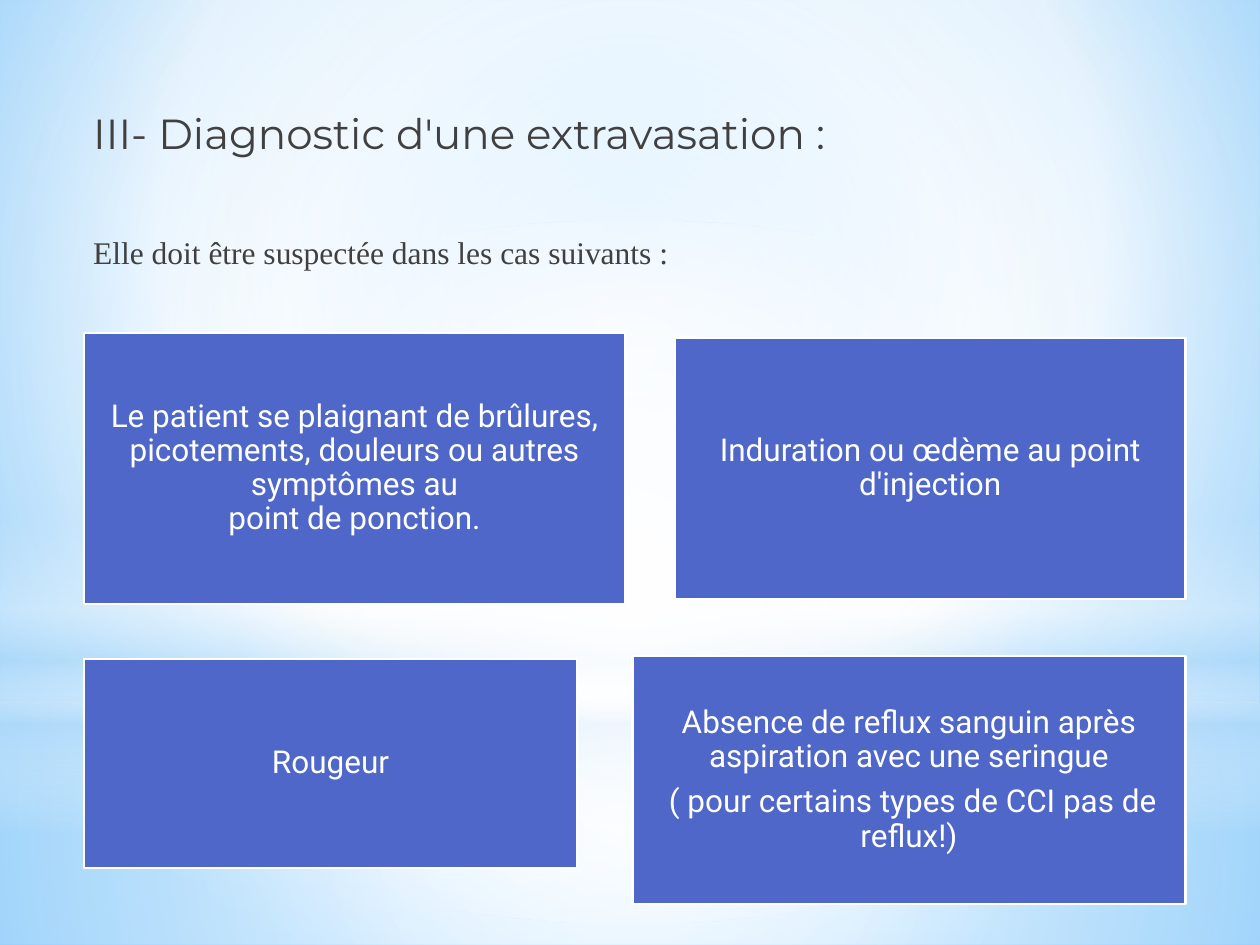
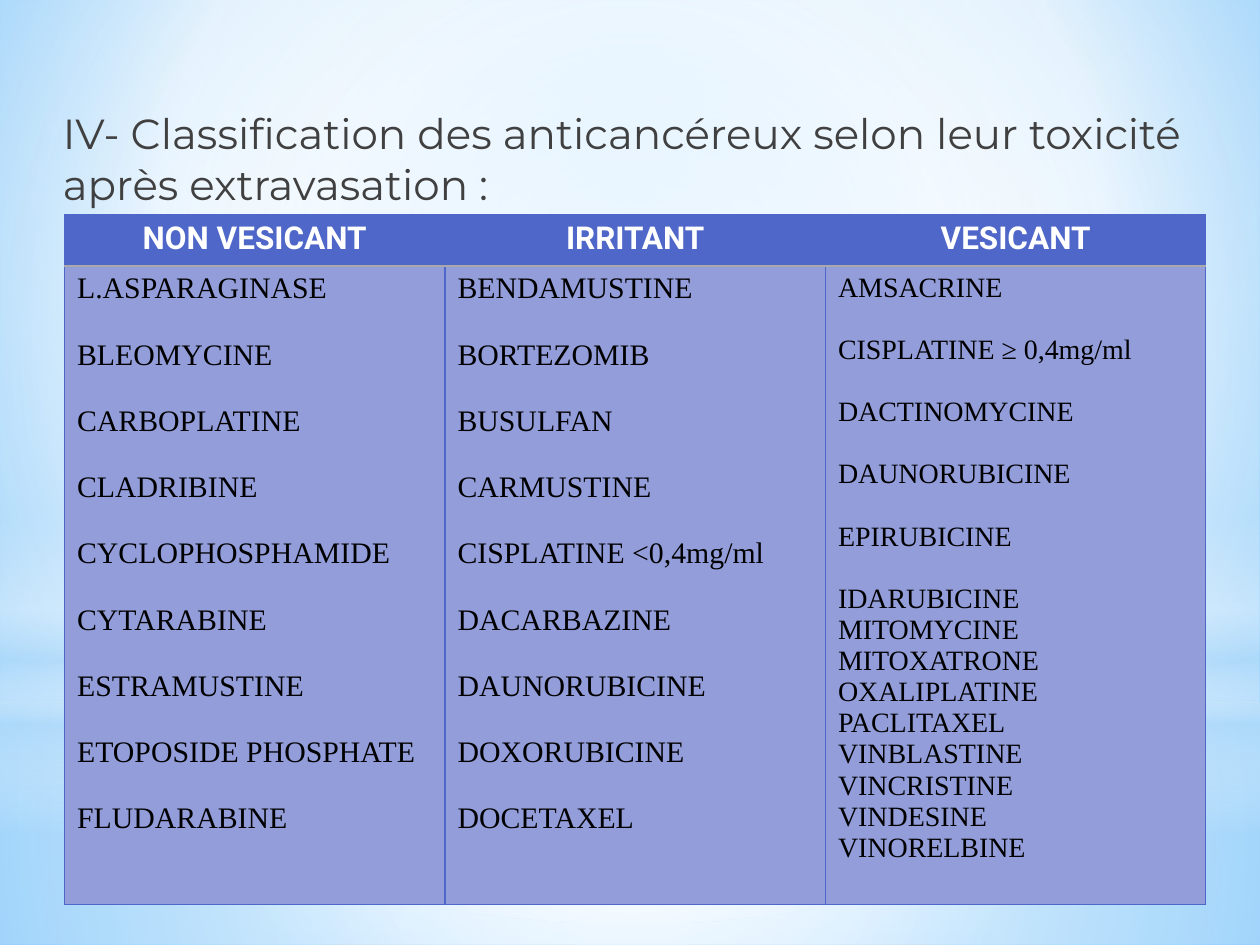
"""Build two slides on the diagnosis and classification of extravasation."""
from dataclasses import dataclass

from lxml import etree
from pptx import Presentation
from pptx.dml.color import RGBColor
from pptx.enum.shapes import MSO_SHAPE
from pptx.enum.text import MSO_ANCHOR, PP_ALIGN
from pptx.oxml.ns import qn
from pptx.util import Cm, Pt

RECTANGLE, OVAL = MSO_SHAPE.RECTANGLE, MSO_SHAPE.OVAL
MIDDLE = MSO_ANCHOR.MIDDLE
LEFT, CENTER = PP_ALIGN.LEFT, PP_ALIGN.CENTER

BLUE, PALE_BLUE, SKY = "4E67C8", "929DDA", "B4DCFA"
WHITE, BLACK, DARK_GREY, GREY = "FFFFFF", "000000", "404040", "A9A9A9"
TITLE_FONT, BODY_FONT, SERIF_FONT = "Montserrat", "Roboto", "Times New Roman"
SLIDE_WIDTH, SLIDE_HEIGHT = 25.4, 19.05
SERIF_LINE = 1.11


@dataclass(frozen=True)
class TextStyle:
    """Look of one run of text."""
    font: str
    size: float
    color: str
    bold: bool = False


@dataclass(frozen=True)
class Box:
    """Position and size in centimetres."""
    left: float
    top: float
    width: float
    height: float

    def lengths(self) -> tuple:
        """Return the four values as lengths."""
        return Cm(self.left), Cm(self.top), Cm(self.width), Cm(self.height)


@dataclass(frozen=True)
class Gradient:
    """Stops (position, colour, opacity), with an angle or a circular focus."""
    stops: tuple
    focus: tuple = (50, 50, 50, 50)
    angle: int | None = None


@dataclass(frozen=True)
class Band:
    """Translucent shape of the backdrop."""
    kind: int
    box: Box
    gradient: Gradient


@dataclass(frozen=True)
class Card:
    """Blue box with centred paragraphs."""
    box: Box
    paragraphs: tuple


@dataclass(frozen=True)
class DrugColumn:
    """Table column: spaced names, then names without a gap."""
    heading: str
    size: int
    spaced: tuple
    tight: tuple = ()


TITLE_STYLE = TextStyle(TITLE_FONT, 24, DARK_GREY)
LEAD_STYLE = TextStyle(SERIF_FONT, 18, DARK_GREY)
CARD_STYLE = TextStyle(BODY_FONT, 18, WHITE)
HEADING_STYLE = TextStyle(BODY_FONT, 18, WHITE, True)

BACKDROP = Gradient(((0, "9ED5FF", 100), (60, WHITE, 100), (100, "5BB9FF", 100)),
                    (20, 10, 20, 60))
HORIZON = 14.17
BANDS = (
    Band(RECTANGLE, Box(0, HORIZON, SLIDE_WIDTH, SLIDE_HEIGHT - HORIZON),
         Gradient(((0, WHITE, 91), (37, WHITE, 76), (100, SKY, 79)))),
    Band(RECTANGLE, Box(0, 0, SLIDE_WIDTH, HORIZON),
         Gradient(((0, WHITE, 89), (48, WHITE, 62), (100, SKY, 79)))),
    Band(RECTANGLE, Box(0, 10.46, SLIDE_WIDTH, 6.35),
         Gradient(((0, WHITE, 0), (29, WHITE, 30), (45, SKY, 40), (55, WHITE, 26),
                   (65, SKY, 60), (100, WHITE, 0)), angle=90)),
    Band(OVAL, Box(0, 4.45, SLIDE_WIDTH, HORIZON),
         Gradient(((0, WHITE, 100), (56, WHITE, 0)))),
)
CARDS = (
    Card(Box(1.7, 6.71, 10.9, 5.46),
         ("Le patient se plaignant de brûlures, picotements, douleurs ou autres "
          "symptômes au\npoint de ponction.",)),
    Card(Box(13.61, 6.81, 10.29, 5.26), ("Induration ou œdème au point d'injection",)),
    Card(Box(1.7, 13.28, 9.93, 4.22), ("Rougeur",)),
    Card(Box(12.75, 13.23, 11.15, 5),
         ("Absence de reflux sanguin après aspiration avec une seringue",
          " ( pour certains types de CCI pas de reflux!)")),
)
DRUG_COLUMNS = (
    DrugColumn("NON VESICANT", 17,
               ("L.ASPARAGINASE", "BLEOMYCINE", "CARBOPLATINE", "CLADRIBINE",
                "CYCLOPHOSPHAMIDE", "CYTARABINE", "ESTRAMUSTINE",
                "ETOPOSIDE PHOSPHATE", "FLUDARABINE")),
    DrugColumn("IRRITANT", 17,
               ("BENDAMUSTINE", "BORTEZOMIB", "BUSULFAN", "CARMUSTINE",
                "CISPLATINE <0,4mg/ml", "DACARBAZINE", "DAUNORUBICINE",
                "DOXORUBICINE", "DOCETAXEL")),
    DrugColumn("VESICANT", 16,
               ("AMSACRINE", "CISPLATINE ≥ 0,4mg/ml", "DACTINOMYCINE",
                "DAUNORUBICINE", "EPIRUBICINE", "IDARUBICINE"),
               ("MITOMYCINE", "MITOXATRONE", "OXALIPLATINE", "PACLITAXEL",
                "VINBLASTINE", "VINCRISTINE", "VINDESINE", "VINORELBINE")),
)


def rgb(color: str) -> RGBColor:
    """Turn a hex string into a colour."""
    return RGBColor.from_string(color)


def add_element(parent, tag: str, **attributes):
    """Append a drawing element with the given attributes."""
    values = {name: str(value) for name, value in attributes.items()}
    return etree.SubElement(parent, qn(f"a:{tag}"), values)


def apply_gradient(fill, owner, gradient: Gradient) -> None:
    """Give the owner of a fill the described gradient."""
    fill.gradient()
    element = owner.find(f".//{qn('a:gradFill')}")
    for child in list(element):
        element.remove(child)
    stops = add_element(element, "gsLst")
    for position, color, opacity in gradient.stops:
        stop = add_element(stops, "gs", pos=position * 1000)
        shade = add_element(stop, "srgbClr", val=color)
        if opacity < 100:
            add_element(shade, "alpha", val=opacity * 1000)
    if gradient.angle is not None:
        add_element(element, "lin", ang=gradient.angle * 60000, scaled=0)
        return
    circle = add_element(element, "path", path="circle")
    sides = {side: value * 1000 for side, value in zip("ltrb", gradient.focus)}
    add_element(circle, "fillToRect", **sides)


def write(paragraph, text: str, style: TextStyle, alignment=LEFT) -> None:
    """Fill a paragraph, with a line break at each newline."""
    paragraph.alignment = alignment
    for index, line in enumerate(text.split("\n")):
        if index:
            paragraph.add_line_break()
        run = paragraph.add_run()
        run.text = line
        font = run.font
        font.name, font.size, font.bold = style.font, Pt(style.size), style.bold
        font.color.rgb = rgb(style.color)


def next_paragraph(frame, index: int):
    """Return the first paragraph of a frame, or a new one."""
    return frame.add_paragraph() if index else frame.paragraphs[0]


def add_base_slide(presentation):
    """Add a blank slide with the backdrop bands."""
    slide = presentation.slides.add_slide(presentation.slide_layouts[6])
    for band in BANDS:
        shape = slide.shapes.add_shape(band.kind, *band.box.lengths())
        shape.shadow.inherit = False
        shape.line.fill.background()
        apply_gradient(shape.fill, shape._element.spPr, band.gradient)
    return slide


def add_title(slide, box: Box, title: str):
    """Add the title and return its text frame."""
    frame = slide.shapes.add_textbox(*box.lengths()).text_frame
    frame.word_wrap = True
    write(frame.paragraphs[0], title, TITLE_STYLE)
    return frame


def add_card(slide, card: Card) -> None:
    """Draw one blue card."""
    shape = slide.shapes.add_shape(RECTANGLE, *card.box.lengths())
    shape.shadow.inherit = False
    shape.fill.solid()
    shape.fill.fore_color.rgb = rgb(BLUE)
    shape.line.color.rgb = rgb(WHITE)
    shape.line.width = Pt(1.25)
    frame = shape.text_frame
    frame.word_wrap = True
    frame.vertical_anchor = MIDDLE
    frame.margin_left = frame.margin_right = Cm(0.18)
    frame.margin_top = frame.margin_bottom = Cm(0.18)
    for index, text in enumerate(card.paragraphs):
        paragraph = next_paragraph(frame, index)
        paragraph.line_spacing = 0.9
        paragraph.space_after = Pt(6.3)
        write(paragraph, text, CARD_STYLE, CENTER)


def style_cell(cell, fill: str, **accents: str) -> None:
    """Set the fill and the borders, with accent colours for some sides."""
    properties = cell._tc.get_or_add_tcPr()
    for side in "LRTB":
        width = Pt(1.25 if side in accents else 0.75)
        line = add_element(properties, f"ln{side}", w=int(width))
        solid = add_element(line, "solidFill")
        add_element(solid, "srgbClr", val=accents.get(side, BLUE))
    cell.fill.solid()
    cell.fill.fore_color.rgb = rgb(fill)


def add_drug_table(slide) -> None:
    """Draw the classification table."""
    column_width, heights = 7.67, (1.04, 12.17)
    box = Box(1.3, 4.32, column_width * len(DRUG_COLUMNS), sum(heights))
    table = slide.shapes.add_table(2, len(DRUG_COLUMNS), *box.lengths()).table
    table.horz_banding = False
    for row, height in zip(table.rows, heights):
        row.height = Cm(height)
    for index, column in enumerate(DRUG_COLUMNS):
        table.columns[index].width = Cm(column_width)
        heading, body = table.cell(0, index), table.cell(1, index)
        style_cell(heading, BLUE, B=GREY)
        write(heading.text_frame.paragraphs[0], column.heading, HEADING_STYLE, CENTER)
        style_cell(body, PALE_BLUE, T=GREY)
        style = TextStyle(SERIF_FONT, column.size, BLACK)
        for position, name in enumerate(column.spaced + column.tight):
            paragraph = next_paragraph(body.text_frame, position)
            if 0 < position < len(column.spaced):
                paragraph.space_before = Pt(round(column.size * SERIF_LINE, 1))
            write(paragraph, name, style)


def build_diagnosis(presentation) -> None:
    """Build the slide on the signs of extravasation."""
    slide = add_base_slide(presentation)
    frame = add_title(slide, Box(1.63, 2.05, 22.27, 4.5),
                      "III- Diagnostic d'une extravasation :")
    lead = frame.add_paragraph()
    lead.space_before = Pt(42.5)
    write(lead, "Elle doit être suspectée dans les cas suivants :", LEAD_STYLE)
    for card in CARDS:
        add_card(slide, card)


def build_classification(presentation) -> None:
    """Build the slide on the toxicity classes."""
    slide = add_base_slide(presentation)
    add_title(slide, Box(1.02, 2.05, 23.3, 2.3),
              "IV- Classification des anticancéreux selon leur toxicité "
              "après extravasation :")
    add_drug_table(slide)


def main() -> None:
    """Build and save the presentation."""
    presentation = Presentation()
    presentation.slide_width = Cm(SLIDE_WIDTH)
    presentation.slide_height = Cm(SLIDE_HEIGHT)
    master = presentation.slide_master
    apply_gradient(master.background.fill, master._element, BACKDROP)
    build_diagnosis(presentation)
    build_classification(presentation)
    presentation.save("out.pptx")


if __name__ == "__main__":
    main()
